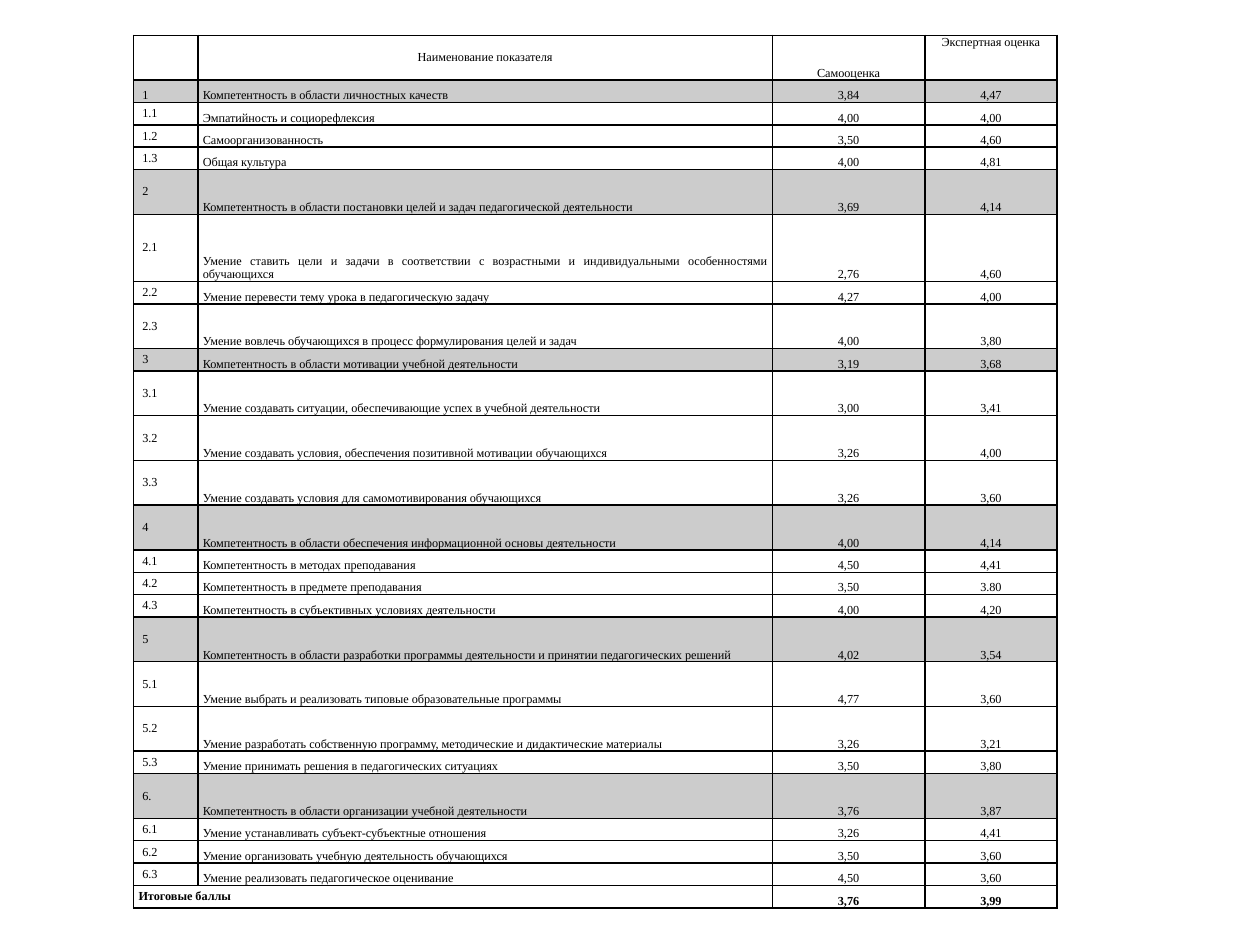
import dataclasses

import pptx
import pptx.dml.color
import pptx.enum.text
import pptx.oxml
import pptx.oxml.ns
import pptx.util

Inches = pptx.util.Inches
Align = pptx.enum.text.PP_ALIGN
Anchor = pptx.enum.text.MSO_ANCHOR


@dataclasses.dataclass(frozen=True)
class Theme:
    font: str = "Times New Roman"
    size: float = 7
    ink: str = "000000"
    band: str = "CCCCCC"
    line: float = 1


HEAD = ("", "Наименование показателя", "Самооценка", "Экспертная оценка")
TOTAL = ("Итоговые баллы", "", "3,76", "3,99")

# Height in units, then number, name, own score and expert score
ITEMS = [
    (1, "1", "Компетентность в области личностных качеств", "3,84", "4,47"),
    (1, "1.1", "Эмпатийность и социорефлексия", "4,00", "4,00"),
    (1, "1.2", "Самоорганизованность", "3,50", "4,60"),
    (1, "1.3", "Общая культура", "4,00", "4,81"),
    (2, "2", "Компетентность в области постановки целей и задач педагогической деятельности", "3,69", "4,14"),
    (3, "2.1", "Умение ставить цели и задачи в соответствии с возрастными и "
     "индивидуальными особенностями обучающихся", "2,76", "4,60"),
    (1, "2.2", "Умение перевести тему урока в педагогическую задачу", "4,27", "4,00"),
    (2, "2.3", "Умение вовлечь обучающихся в процесс формулирования целей и задач", "4,00", "3,80"),
    (1, "3", "Компетентность в области мотивации учебной деятельности", "3,19", "3,68"),
    (2, "3.1", "Умение создавать ситуации, обеспечивающие успех в учебной деятельности", "3,00", "3,41"),
    (2, "3.2", "Умение создавать условия, обеспечения позитивной мотивации обучающихся", "3,26", "4,00"),
    (2, "3.3", "Умение создавать условия для самомотивирования обучающихся", "3,26", "3,60"),
    (2, "4", "Компетентность в области обеспечения информационной основы деятельности", "4,00", "4,14"),
    (1, "4.1", "Компетентность в методах преподавания", "4,50", "4,41"),
    (1, "4.2", "Компетентность в предмете преподавания", "3,50", "3.80"),
    (1, "4.3", "Компетентность в субъективных условиях деятельности", "4,00", "4,20"),
    (2, "5", "Компетентность в области разработки программы деятельности и принятии "
     "педагогических решений", "4,02", "3,54"),
    (2, "5.1", "Умение выбрать и реализовать типовые образовательные программы", "4,77", "3,60"),
    (2, "5.2", "Умение разработать собственную программу, методические и дидактические материалы",
     "3,26", "3,21"),
    (1, "5.3", "Умение принимать решения в педагогических ситуациях", "3,50", "3,80"),
    (2, "6.", "Компетентность в области организации учебной деятельности", "3,76", "3,87"),
    (1, "6.1", "Умение устанавливать субъект-субъектные отношения", "3,26", "4,41"),
    (1, "6.2", "Умение организовать учебную деятельность обучающихся", "3,50", "3,60"),
    (1, "6.3", "Умение реализовать педагогическое оценивание", "4,50", "3,60"),
]

COLS = (0.51, 4.56, 1.21, 1.05)
LEFT, TOP, HIGH = 1.06, 0.28, 6.93
ALIGNS = (Align.JUSTIFY, Align.JUSTIFY, Align.CENTER, Align.CENTER)
ANCHORS = (Anchor.MIDDLE, Anchor.BOTTOM, Anchor.BOTTOM, Anchor.BOTTOM)


def apply(item, values):
    for name, value in values.items():
        setattr(item, name, value)


class Board:
    def __init__(self, slide, theme):
        self.slide = slide
        self.theme = theme

    def table(self, left, top, high, cols, units):
        """Add a plain grid whose rows share the height by units."""
        shape = self.slide.shapes.add_table(
            len(units), len(cols), Inches(left), Inches(top), Inches(sum(cols)), Inches(high))
        grid = shape.table
        apply(grid, {"first_row": False, "horz_banding": False})
        for col, wide in zip(grid.columns, cols):
            col.width = Inches(wide)
        for row, unit in zip(grid.rows, units):
            row.height = Inches(high * unit / sum(units))
        return grid

    def cell(self, cell, text, align, anchor, fill=None, bold=False, indent=0):
        apply(cell, {
            "margin_left": Inches(0.04), "margin_right": Inches(0.04),
            "margin_top": 0, "margin_bottom": 0, "vertical_anchor": anchor})
        self.frame(cell)
        if fill:
            cell.fill.solid()
            cell.fill.fore_color.rgb = pptx.dml.color.RGBColor.from_string(fill)
        else:
            cell.fill.background()
        if not text:
            return
        para = cell.text_frame.paragraphs[0]
        para.alignment = align
        if indent:
            props = para._p.get_or_add_pPr()
            props.set("marL", "0")
            props.set("indent", str(Inches(indent)))
        run = para.add_run()
        run.text = text
        apply(run.font, {
            "name": self.theme.font, "size": pptx.util.Pt(self.theme.size), "bold": bold})
        run.font.color.rgb = pptx.dml.color.RGBColor.from_string(self.theme.ink)

    def frame(self, cell):
        """Draw a line on all four sides of a cell."""
        props = cell._tc.get_or_add_tcPr()
        space = pptx.oxml.ns.nsdecls("a")
        for side in "LRTB":
            props.append(pptx.oxml.parse_xml(
                f'<a:ln{side} {space} w="{pptx.util.Pt(self.theme.line)}"><a:solidFill>'
                f'<a:srgbClr val="{self.theme.ink}"/></a:solidFill></a:ln{side}>'))


def main():
    deck = pptx.Presentation()
    apply(deck, {"slide_width": Inches(10), "slide_height": Inches(7.5)})
    theme = Theme()
    board = Board(deck.slides.add_slide(deck.slide_layouts[6]), theme)
    units = [2] + [item[0] for item in ITEMS] + [1]
    grid = board.table(LEFT, TOP, HIGH, COLS, units)

    tops = (Anchor.MIDDLE, Anchor.MIDDLE, Anchor.BOTTOM, Anchor.TOP)
    for col, text in enumerate(HEAD):
        board.cell(grid.cell(0, col), text, Align.CENTER, tops[col])

    for row, (_, *texts) in enumerate(ITEMS, 1):
        code = texts[0]
        group = not code.rstrip(".").count(".")
        for col, text in enumerate(texts):
            anchor = Anchor.BOTTOM if code == "1" else ANCHORS[col]
            board.cell(grid.cell(row, col), text, ALIGNS[col], anchor,
                       fill=theme.band if group else None, indent=0 if col else 0.03)

    last = len(units) - 1
    for col, text in enumerate(TOTAL):
        align = ALIGNS[col] if col else Align.LEFT
        board.cell(grid.cell(last, col), text, align, ANCHORS[col], bold=True)
    grid.cell(last, 0).merge(grid.cell(last, 1))

    deck.save("out.pptx")


if __name__ == "__main__":
    main()
